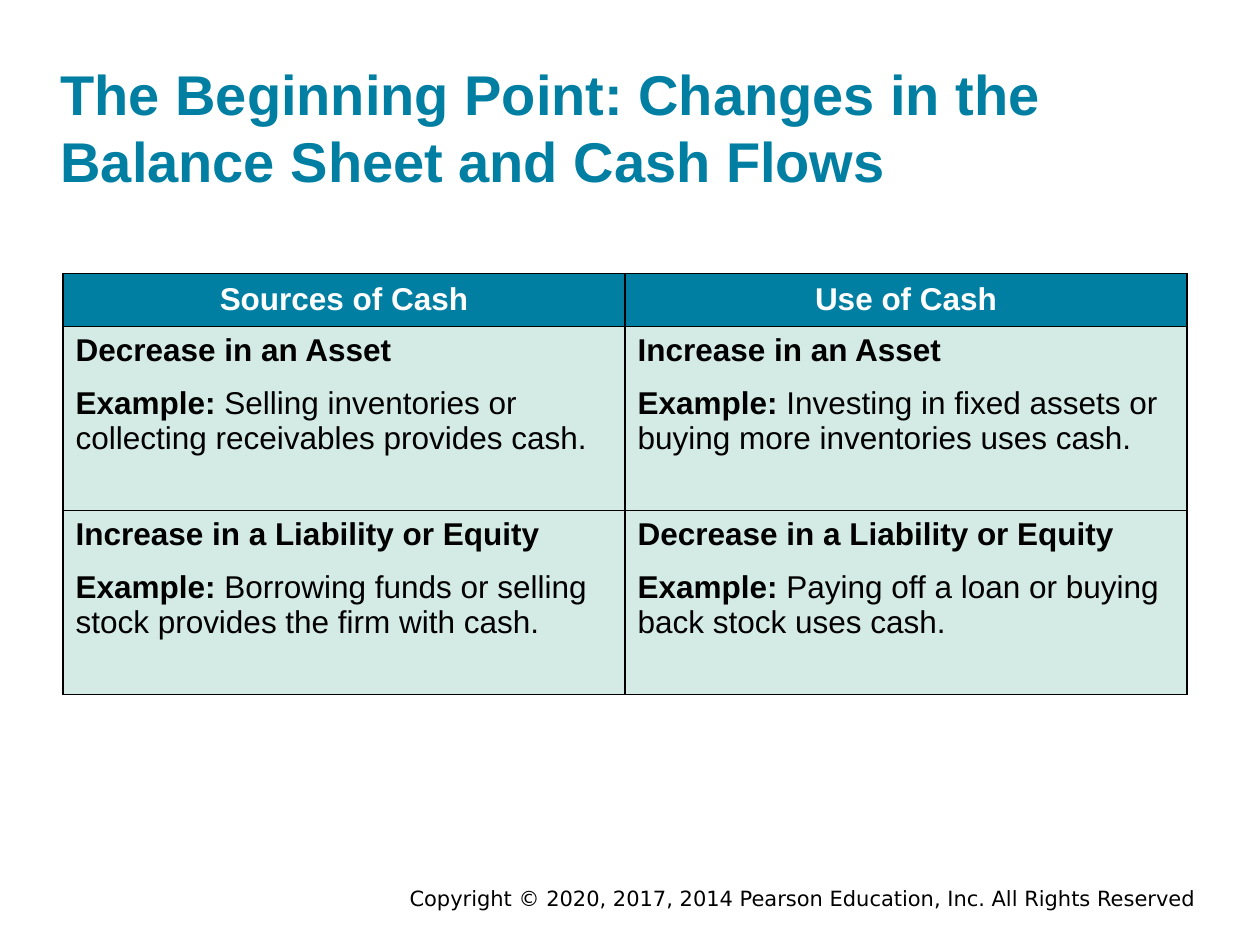
from lxml import etree
from pptx import Presentation
from pptx import util as u
from pptx.dml.color import RGBColor
from pptx.enum import text as t
from pptx.oxml import ns

HUES = {"teal": "007FA3", "mint": "D4EAE4", "black": "000000", "white": "FFFFFF"}
ROWS = [
    ("head", "Sources of Cash", "Use of Cash"),
    ("term", "Decrease in an Asset", "Increase in an Asset"),
    ("case", "Selling inventories or collecting receivables provides cash.",
     "Investing in fixed assets or buying more inventories uses cash."),
    ("term", "Increase in a Liability or Equity", "Decrease in a Liability or Equity"),
    ("case", "Borrowing funds or selling stock provides the firm with cash.",
     "Paying off a loan or buying back stock uses cash."),
]
HIGH = {"head": 1.07, "term": 1.07, "case": 2.64}
EDGES = {"head": "LRTB", "term": "LRT", "case": "LRB"}


def hue(name):
    """Return the named colour."""
    return RGBColor.from_string(HUES[name])


def write(frame, words, size=18, font="Arial", tint="black", bold=False, align="LEFT"):
    """Add one run of formatted text to the first paragraph."""
    para = frame.paragraphs[0]
    para.alignment = t.PP_ALIGN[align]
    run = para.add_run()
    run.text = words
    run.font.size, run.font.name, run.font.bold = u.Pt(size), font, bold
    run.font.color.rgb = hue(tint)


def label(slide, box, words, pad=None, anchor="TOP", **style):
    """Place a wrapped text box."""
    frame = slide.shapes.add_textbox(*map(u.Cm, box)).text_frame
    frame.word_wrap = True
    frame.vertical_anchor = t.MSO_ANCHOR[anchor]
    if pad is not None:
        frame.margin_left = frame.margin_right = u.Cm(pad)
        frame.margin_top = frame.margin_bottom = u.Cm(pad)
    write(frame, words, **style)


def border(cell, edges):
    """Draw the given edges of a cell and clear the others."""
    props = cell._tc.get_or_add_tcPr()
    for spot, side in enumerate("LRTB"):
        line = etree.Element(ns.qn(f"a:ln{side}"), w=str(u.Pt(1)))
        if side in edges:
            fill = etree.SubElement(line, ns.qn("a:solidFill"))
            etree.SubElement(fill, ns.qn("a:srgbClr"), val=HUES["black"])
        else:
            etree.SubElement(line, ns.qn("a:noFill"))
        props.insert(spot, line)


def fill(cell, kind, words):
    """Fill one cell in the style of its row."""
    head = kind == "head"
    cell.fill.solid()
    cell.fill.fore_color.rgb = hue("teal" if head else "mint")
    border(cell, EDGES[kind])
    if head:
        cell.vertical_anchor = t.MSO_ANCHOR.MIDDLE
        write(cell.text_frame, words, tint="white", bold=True, align="CENTER")
    elif kind == "term":
        write(cell.text_frame, words, bold=True)
    else:
        write(cell.text_frame, "Example: ", bold=True)
        write(cell.text_frame, words)


def grid(slide, box):
    """Place the table of sources and uses."""
    table = slide.shapes.add_table(len(ROWS), 2, *map(u.Cm, box)).table
    for col in table.columns:
        col.width = u.Cm(box[2] / 2)
    for row, (kind, *texts) in zip(table.rows, ROWS):
        row.height = u.Cm(HIGH[kind])
        for cell, words in zip(row.cells, texts):
            fill(cell, kind, words)


def main():
    """Build and save the slide."""
    deck = Presentation()
    deck.slide_width, deck.slide_height = u.Cm(25.4), u.Cm(19.05)
    slide = deck.slides.add_slide(deck.slide_layouts[6])
    label(slide, (4.47, 17.73, 19.89, 0.76),
          "Copyright © 2020, 2017, 2014 Pearson Education, Inc. All Rights Reserved",
          size=12, font="DejaVu Sans", align="RIGHT")
    label(slide, (1.22, 1.17, 22.68, 2.74),
          "The Beginning Point: Changes in the Balance Sheet and Cash Flows",
          pad=0, anchor="BOTTOM", size=32, tint="teal", bold=True)
    grid(slide, (1.27, 5.51, 22.66, sum(HIGH[row[0]] for row in ROWS)))
    deck.save("out.pptx")


if __name__ == "__main__":
    main()
